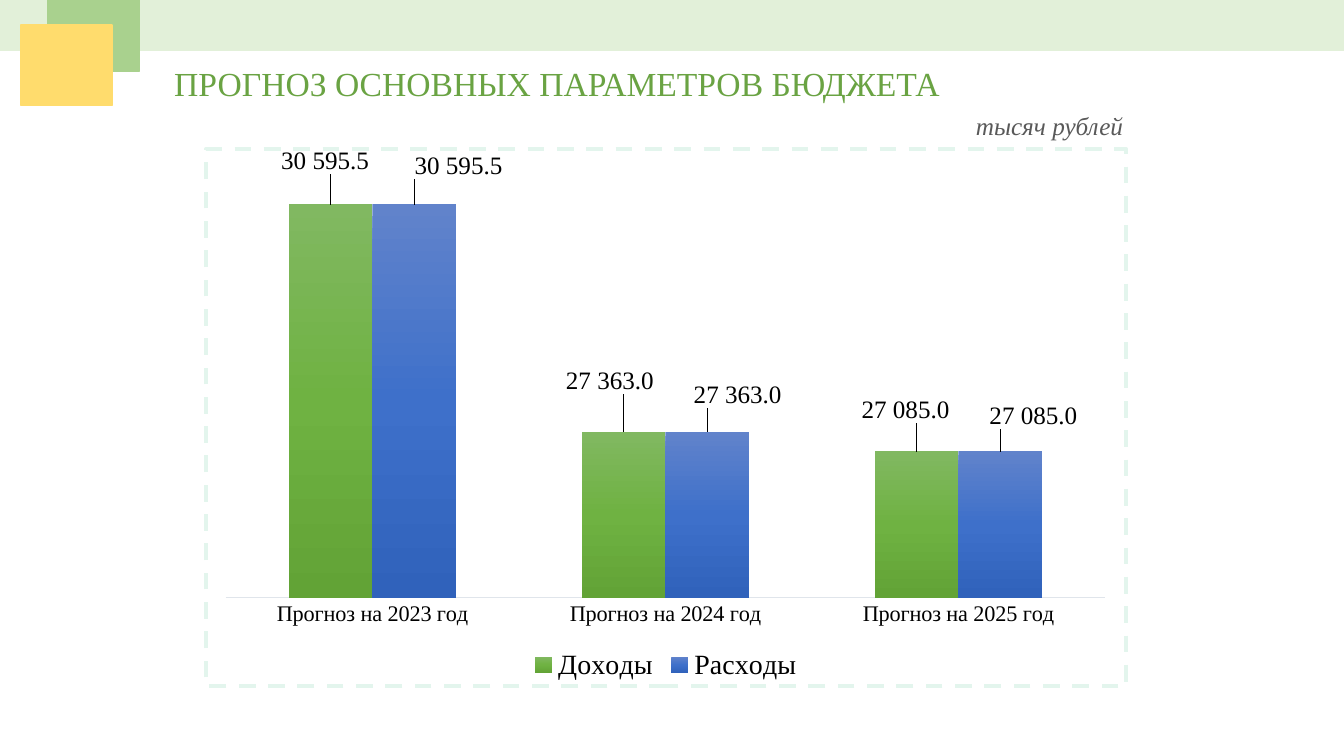
from pptx import Presentation
from pptx.chart.data import CategoryChartData
from pptx.dml.color import RGBColor
from pptx.enum.chart import (XL_CHART_TYPE, XL_LABEL_POSITION,
                             XL_LEGEND_POSITION, XL_TICK_MARK)
from pptx.enum.shapes import MSO_SHAPE
from pptx.enum.text import MSO_AUTO_SIZE
from pptx.oxml import parse_xml
from pptx.oxml.ns import nsdecls, qn
from pptx.util import Inches, Pt

RECT = MSO_SHAPE.RECTANGLE
COLUMNS = XL_CHART_TYPE.COLUMN_CLUSTERED
LEGEND_BOTTOM = XL_LEGEND_POSITION.BOTTOM
NO_TICK = XL_TICK_MARK.NONE
OUTSIDE_END = XL_LABEL_POSITION.OUTSIDE_END
FIT_TEXT = MSO_AUTO_SIZE.SHAPE_TO_FIT_TEXT

TITLE_GREEN = RGBColor(0x6A, 0xA3, 0x43)
BAND_GREEN = RGBColor(0xE2, 0xF0, 0xD9)
SQUARE_GREEN = RGBColor(0xA9, 0xD1, 0x8E)
SQUARE_YELLOW = RGBColor(0xFF, 0xDC, 0x6D)
UNIT_GREY = RGBColor(0x59, 0x59, 0x59)
AXIS_GREY = RGBColor(0xE0, 0xE5, 0xEB)
BORDER_MINT = RGBColor(0xE3, 0xF5, 0xED)
BLACK = RGBColor(0, 0, 0)
GREENS = (RGBColor(0x81, 0xB8, 0x61), RGBColor(0x6F, 0xB2, 0x42), RGBColor(0x62, 0xA3, 0x36))
BLUES = (RGBColor(0x61, 0x83, 0xCB), RGBColor(0x3E, 0x70, 0xCA), RGBColor(0x30, 0x62, 0xBB))

SERIF = "Times New Roman"
NUMBER_FORMAT = r"#\ ##0.0"
YEARS = (2023, 2024, 2025)
BUDGET = (30595.5, 27363, 27085)
# Name, gradient, and label shifts (x, y) in percent of the chart size
SERIES = (
    ("Доходы", GREENS, ((-0.6, -4.8), (-1.5, -6.1), (-1.2, -4.4))),
    ("Расходы", BLUES, ((4.8, -3.9), (3.3, -3.5), (3.6, -3.3))),
)


def set_font(font, size, color, name=SERIF):
    font.size, font.name = Pt(size), name
    font.color.rgb = color


def add_rect(slide, left, top, width, height, color):
    s = slide.shapes.add_shape(RECT, Inches(left), Inches(top), Inches(width), Inches(height))
    s.shadow.inherit = False
    s.fill.solid()
    s.fill.fore_color.rgb = color
    s.line.color.rgb = color
    s.line.width = Pt(1)


def add_text(slide, left, top, width, height, text, size, color, italic=False):
    s = slide.shapes.add_textbox(Inches(left), Inches(top), Inches(width), Inches(height))
    tf = s.text_frame
    tf.word_wrap = False
    tf.auto_size = FIT_TEXT
    p = tf.paragraphs[0]
    p.text = text
    set_font(p.font, size, color)
    p.font.italic = italic


def manual_layout(x, y, extra=""):
    """Layout element; x and y are percentages of the chart size."""
    return parse_xml(
        f'<c:layout {nsdecls("c")}><c:manualLayout>{extra}'
        f'<c:x val="{x / 100:.3f}"/><c:y val="{y / 100:.3f}"/>'
        '</c:manualLayout></c:layout>')


def place_plot_area(chart, x, y, width, height):
    layout = manual_layout(
        x, y, '<c:layoutTarget val="inner"/><c:xMode val="edge"/><c:yMode val="edge"/>')
    for tag, size in (("w", width), ("h", height)):
        layout[0].append(parse_xml(f'<c:{tag} {nsdecls("c")} val="{size / 100:.3f}"/>'))
    plot_area = chart.element.find(".//" + qn("c:plotArea"))
    for old in plot_area.findall(qn("c:layout")):
        plot_area.remove(old)
    plot_area.insert(0, layout)


def add_dashed_border(chart):
    chart.element.find(qn("c:chart")).addnext(parse_xml(
        f'<c:spPr {nsdecls("c", "a")}><a:noFill/><a:ln w="{Pt(3)}"><a:solidFill>'
        f'<a:srgbClr val="{BORDER_MINT}"/></a:solidFill><a:prstDash val="dash"/></a:ln></c:spPr>'))


def fill_gradient(series, colors):
    """Vertical gradient with evenly spaced stops."""
    step = 100000 // (len(colors) - 1)
    stops = "".join(f'<a:gs pos="{i * step}"><a:srgbClr val="{color}"/></a:gs>'
                    for i, color in enumerate(colors))
    series.format.fill.background()
    no_fill = series.format.fill and series._element.find(qn("c:spPr")).find(qn("a:noFill"))
    no_fill.getparent().replace(no_fill, parse_xml(
        f'<a:gradFill {nsdecls("a")}><a:gsLst>{stops}</a:gsLst>'
        '<a:lin ang="5400000" scaled="0"/></a:gradFill>'))


def label_series(series, shifts):
    labels = series.data_labels
    labels.show_value = True
    labels.number_format = NUMBER_FORMAT
    labels.number_format_is_linked = False
    labels.position = OUTSIDE_END
    set_font(labels.font, 18, BLACK)
    for i in range(len(shifts)):
        label = series.points[i].data_label
        set_font(label.font, 18, BLACK)
        label.position = OUTSIDE_END
    for label, shift in zip(series._element.iter(qn("c:dLbl")), shifts):
        label.find(qn("c:idx")).addnext(manual_layout(*shift))


def style_axes(chart):
    years = chart.category_axis
    years.major_tick_mark = years.minor_tick_mark = NO_TICK
    years.format.line.color.rgb = AXIS_GREY
    years.format.line.width = Pt(0.75)
    set_font(years.tick_labels.font, 16, BLACK)
    amounts = chart.value_axis
    amounts.minimum_scale, amounts.maximum_scale = 25000, 31000
    amounts.has_major_gridlines = False
    amounts.visible = False


def add_budget_chart(slide):
    data = CategoryChartData(number_format=NUMBER_FORMAT)
    data.categories = [f"Прогноз на {year} год" for year in YEARS]
    for name, _, _ in SERIES:
        data.add_series(name, BUDGET)
    chart = slide.shapes.add_chart(COLUMNS, Inches(2.02), Inches(1.46),
                                   Inches(9.17), Inches(5.37), data).chart
    set_font(chart.font, 10, BLACK, "Calibri")
    chart.has_title = False
    chart.has_legend = True
    chart.legend.position = LEGEND_BOTTOM
    chart.legend.include_in_layout = False
    set_font(chart.legend.font, 20, BLACK)
    style_axes(chart)
    plot = chart.plots[0]
    plot.gap_width, plot.overlap = 150, 0
    plot.vary_by_categories = False
    for series, (_, colors, shifts) in zip(plot.series, SERIES):
        fill_gradient(series, colors)
        label_series(series, shifts)
    place_plot_area(chart, 2.2, 5, 95.5, 78.5)
    add_dashed_border(chart)


def main():
    prs = Presentation()
    prs.slide_width, prs.slide_height = Inches(13.33), Inches(7.5)
    slide = prs.slides.add_slide(prs.slide_layouts[6])
    add_text(slide, 1.63, 0.58, 7.87, 0.5, "ПРОГНОЗ ОСНОВНЫХ ПАРАМЕТРОВ БЮДЖЕТА", 24, TITLE_GREEN)
    add_rect(slide, 0, 0, 13.33, 0.5, BAND_GREEN)
    add_rect(slide, 0.47, 0, 0.91, 0.71, SQUARE_GREEN)
    add_rect(slide, 0.21, 0.25, 0.9, 0.8, SQUARE_YELLOW)
    add_budget_chart(slide)
    add_text(slide, 9.58, 1.05, 1.68, 0.4, "тысяч рублей", 18, UNIT_GREY, italic=True)
    prs.save("out.pptx")


if __name__ == "__main__":
    main()
